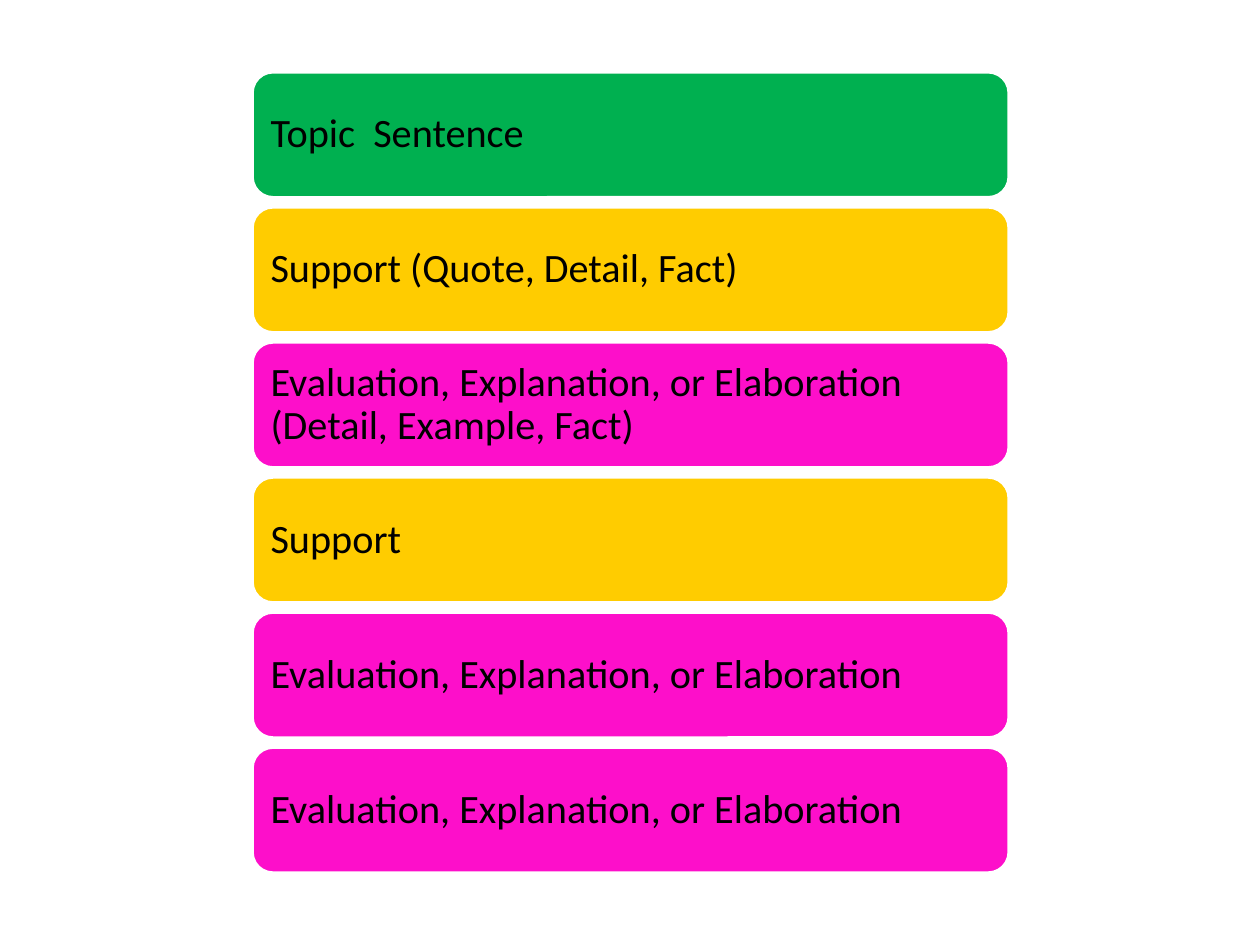
"""Build a slide that stacks the parts of a paragraph as coloured bars."""
from dataclasses import dataclass

from pptx import Presentation
from pptx import util as u
from pptx.dml.color import RGBColor
from pptx.enum import shapes, text
from pptx.slide import Slide


@dataclass(frozen=True)
class Theme:
    topic: RGBColor = RGBColor(0x00, 0xB0, 0x50)
    support: RGBColor = RGBColor(0xFF, 0xCC, 0x00)
    evaluation: RGBColor = RGBColor(0xFD, 0x0F, 0xCA)
    outline: RGBColor = RGBColor(0xFF, 0xFF, 0xFF)
    ink: RGBColor = RGBColor(0x00, 0x00, 0x00)
    font: str = "Calibri"
    size: u.Pt = u.Pt(23)
    outline_width: u.Pt = u.Pt(2)


@dataclass(frozen=True)
class Bar:
    label: str
    fill: RGBColor


THEME = Theme()
LEFT, WIDTH, HEIGHT = u.Inches(2), u.Inches(6.01), u.Inches(1)
FIRST_TOP, LAST_TOP = u.Inches(0.57), u.Inches(5.93)
INSET = u.Inches(0.1)
EVALUATION = "Evaluation, Explanation, or Elaboration"
BARS = (
    Bar("Topic  Sentence", THEME.topic),
    Bar("Support (Quote, Detail, Fact)", THEME.support),
    Bar(f"{EVALUATION} (Detail, Example, Fact)", THEME.evaluation),
    Bar("Support", THEME.support),
    Bar(EVALUATION, THEME.evaluation),
    Bar(EVALUATION, THEME.evaluation),
)


def draw_bar(slide: Slide, bar: Bar, top: int) -> None:
    shape = slide.shapes.add_shape(
        shapes.MSO_SHAPE.ROUNDED_RECTANGLE, LEFT, top, WIDTH, HEIGHT
    )
    shape.shadow.inherit = False
    shape.fill.solid()
    shape.fill.fore_color.rgb = bar.fill
    shape.line.color.rgb = THEME.outline
    shape.line.width = THEME.outline_width

    frame = shape.text_frame
    frame.word_wrap = True
    frame.vertical_anchor = text.MSO_ANCHOR.MIDDLE
    frame.margin_left = frame.margin_right = INSET
    frame.margin_top = frame.margin_bottom = INSET

    paragraph = frame.paragraphs[0]
    paragraph.text = bar.label
    paragraph.alignment = text.PP_ALIGN.LEFT
    paragraph.line_spacing = 0.9
    paragraph.font.name = THEME.font
    paragraph.font.size = THEME.size
    paragraph.font.color.rgb = THEME.ink


def main() -> None:
    presentation = Presentation()
    presentation.slide_width = u.Inches(10)
    presentation.slide_height = u.Inches(7.5)
    slide = presentation.slides.add_slide(presentation.slide_layouts[6])
    pitch = (LAST_TOP - FIRST_TOP) // (len(BARS) - 1)
    for index, bar in enumerate(BARS):
        draw_bar(slide, bar, FIRST_TOP + index * pitch)
    presentation.save("out.pptx")


if __name__ == "__main__":
    main()
